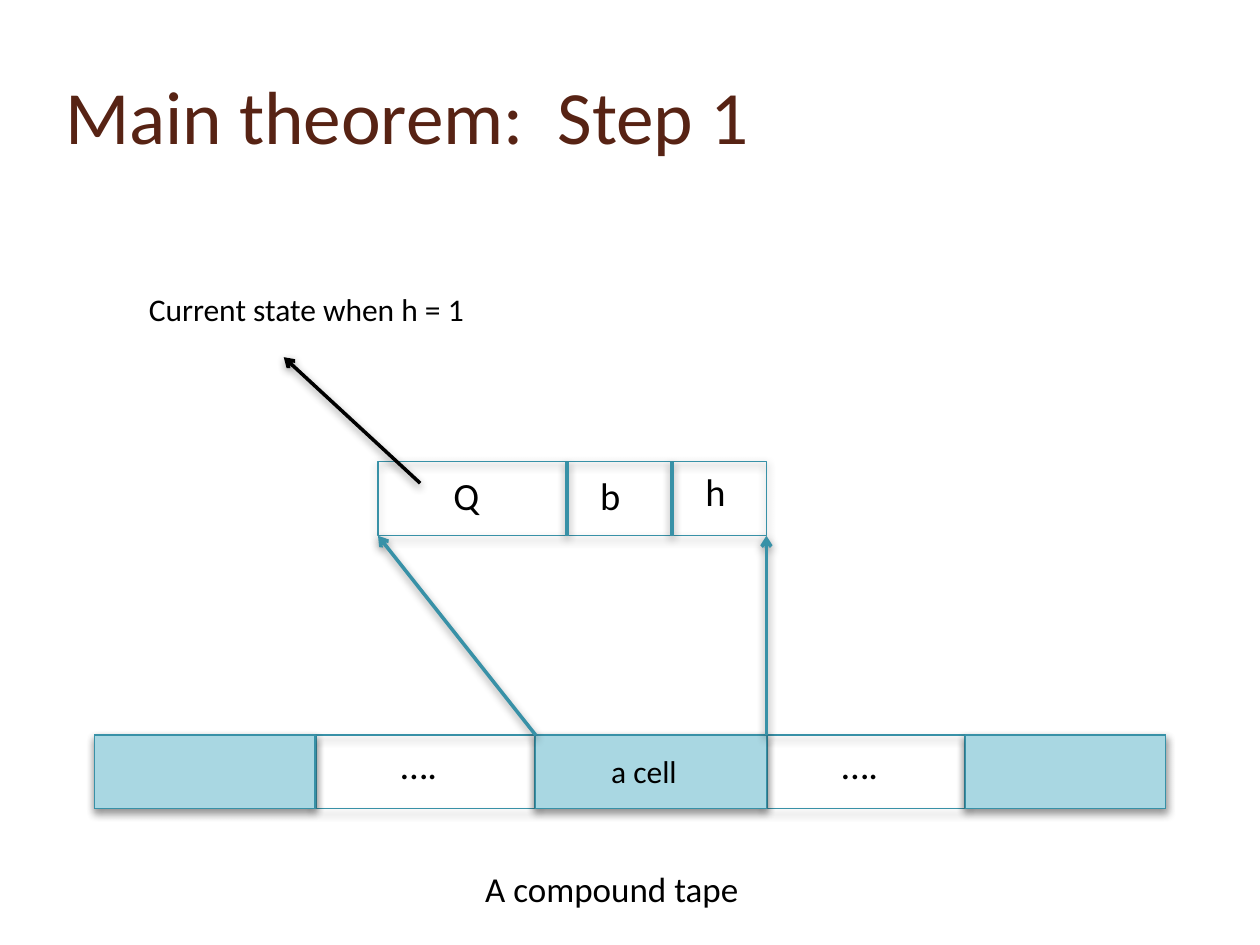
from dataclasses import dataclass
from itertools import pairwise

from lxml.etree import SubElement
from pptx import Presentation
from pptx.dml.color import RGBColor
from pptx.enum.shapes import MSO_CONNECTOR as Conn, MSO_SHAPE as Shp
from pptx.enum.text import MSO_ANCHOR as Anchor, MSO_AUTO_SIZE as Fit, PP_ALIGN as Align
from pptx.oxml import parse_xml
from pptx.oxml.ns import nsdecls, qn
from pptx.util import Cm, Pt

BROWN = RGBColor(0x57, 0x23, 0x14)
TEAL = RGBColor(0x38, 0x91, 0xA7)
PALE = RGBColor(0xA9, 0xD7, 0xE2)
BLACK = RGBColor(0, 0, 0)

SHADOW = (
    f'<a:effectLst {nsdecls("a")}>'
    f'<a:outerShdw blurRad="{Pt(5)}" dist="{Pt(2)}" dir="5400000" rotWithShape="0">'
    '<a:srgbClr val="000000"><a:alpha val="43000"/></a:srgbClr>'
    '</a:outerShdw></a:effectLst>'
)

TAPE_TOP, TAPE_BOTTOM = 14.82, 16.3
TAPE_EDGES = (1.91, 6.35, 10.8, 15.45, 19.47, 23.5)
CELL_TOP, CELL_BOTTOM = 9.31, 10.8
CELL_EDGES = (7.62, 11.43, 13.55, 15.45)


@dataclass(frozen=True)
class Label:
    text: str
    left: float
    top: float
    width: float
    height: float
    size: int


@dataclass(frozen=True)
class Line:
    x1: float
    y1: float
    x2: float
    y2: float
    color: RGBColor = TEAL
    arrow: bool = False


TAPE_LABELS = (
    Label("….", 7.83, TAPE_TOP, 2.96, 1.2, 22),
    Label("….", 16.72, TAPE_TOP, 2.96, 1.2, 22),
    Label("A compound tape", 9.53, 17.36, 9.74, 1.11, 20),
)
CELL_LABELS = (
    Label("h", 13.97, CELL_TOP, 0.85, 1.2, 22),
    Label("b", 11.85, 9.4, 0.85, 1.2, 22),
    Label("Q", 8.89, 9.4, 2.33, 1.2, 22),
)
CELL_NAME = Label("a cell", 12.07, 15.03, 2.75, 1.02, 18)
STATE_NOTE = Label("Current state when h = 1", 2.75, 5.73, 9.31, 1.02, 18)


def set_all(obj, fmt: dict) -> None:
    for name, value in fmt.items():
        setattr(obj, name, value)


def write(tf, text: str, size: int, color: RGBColor) -> None:
    p = tf.paragraphs[0]
    p.alignment = Align.LEFT
    r = p.add_run()
    r.text = text
    set_all(r.font, {"name": "Calibri", "size": Pt(size)})
    r.font.color.rgb = color


def add_title(s, text: str) -> None:
    sp = s.shapes.title
    set_all(sp, {"left": Cm(1.06), "top": Cm(0.85), "width": Cm(23.28), "height": Cm(2.92)})
    set_all(sp.text_frame, {"vertical_anchor": Anchor.MIDDLE, "auto_size": Fit.NONE})
    write(sp.text_frame, text, 43, BROWN)


def add_label(s, label: Label) -> None:
    box = map(Cm, (label.left, label.top, label.width, label.height))
    tf = s.shapes.add_textbox(*box).text_frame
    set_all(tf, {"word_wrap": True, "auto_size": Fit.SHAPE_TO_FIT_TEXT})
    write(tf, label.text, label.size, BLACK)


def add_box(s, left: float, right: float, top: float, bottom: float,
            fill: RGBColor | None = None) -> None:
    box = map(Cm, (left, top, right - left, bottom - top))
    sp = s.shapes.add_shape(Shp.RECTANGLE, *box)
    if fill is None:
        sp.fill.background()
    else:
        sp.fill.solid()
        sp.fill.fore_color.rgb = fill
    sp.line.width = Pt(0.75)
    sp.line.color.rgb = TEAL
    sp._element.spPr.append(parse_xml(SHADOW))


def add_line(s, line: Line) -> None:
    ends = map(Cm, (line.x1, line.y1, line.x2, line.y2))
    cn = s.shapes.add_connector(Conn.STRAIGHT, *ends)
    cn.line.width = Pt(2)
    cn.line.color.rgb = line.color
    if line.arrow:
        SubElement(cn.line._get_or_add_ln(), qn("a:tailEnd"), type="arrow")
    cn._element.spPr.append(parse_xml(SHADOW))


def add_dividers(s, edges: tuple[float, ...], top: float, bottom: float) -> None:
    for x in edges[1:-1]:
        add_line(s, Line(x, top, x, bottom))


def add_labels(s, labels: tuple[Label, ...]) -> None:
    for label in labels:
        add_label(s, label)


def add_tape(s) -> None:
    add_box(s, TAPE_EDGES[0], TAPE_EDGES[-1], TAPE_TOP, TAPE_BOTTOM)
    add_dividers(s, TAPE_EDGES, TAPE_TOP, TAPE_BOTTOM)
    add_labels(s, TAPE_LABELS)
    for left, right in list(pairwise(TAPE_EDGES))[::2]:
        add_box(s, left, right, TAPE_TOP, TAPE_BOTTOM, PALE)
    add_label(s, CELL_NAME)


def add_cell_detail(s) -> None:
    add_box(s, CELL_EDGES[0], CELL_EDGES[-1], CELL_TOP, CELL_BOTTOM)
    for start, end in zip(TAPE_EDGES[2:4], (CELL_EDGES[0], CELL_EDGES[-1])):
        add_line(s, Line(start, TAPE_TOP, end, CELL_BOTTOM, arrow=True))
    add_dividers(s, CELL_EDGES, CELL_TOP, CELL_BOTTOM)
    add_labels(s, CELL_LABELS)
    add_line(s, Line(8.47, 9.74, 5.72, 7.2, BLACK, True))
    add_label(s, STATE_NOTE)


def main() -> None:
    prs = Presentation()
    set_all(prs, {"slide_width": Cm(25.4), "slide_height": Cm(19.05)})
    s = prs.slides.add_slide(prs.slide_layouts[5])
    add_title(s, "Main theorem:  Step 1")
    add_tape(s)
    add_cell_detail(s)
    prs.save("out.pptx")


if __name__ == "__main__":
    main()
